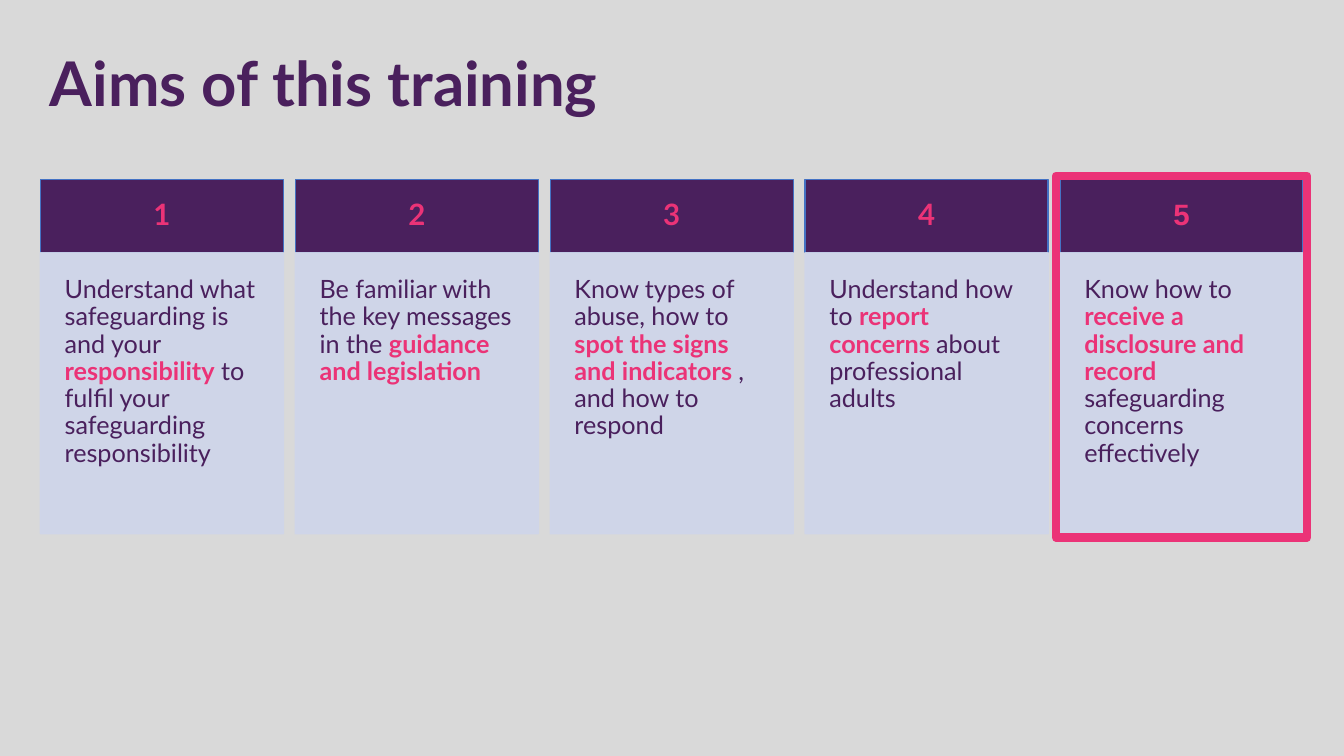
from dataclasses import dataclass

from lxml import etree
from pptx import Presentation
from pptx.dml.color import RGBColor
from pptx.enum.shapes import MSO_SHAPE
from pptx.enum.text import MSO_ANCHOR, MSO_AUTO_SIZE, PP_ALIGN
from pptx.oxml.ns import qn
from pptx.util import Cm, Pt

RECTANGLE = MSO_SHAPE.RECTANGLE
TOP, MIDDLE = MSO_ANCHOR.TOP, MSO_ANCHOR.MIDDLE
LEFT, CENTER = PP_ALIGN.LEFT, PP_ALIGN.CENTER
NO_FIT = MSO_AUTO_SIZE.NONE
TITLE_ONLY = 5


@dataclass(frozen=True)
class Theme:
    background: RGBColor = RGBColor(0xD9, 0xD9, 0xD9)
    purple: RGBColor = RGBColor(0x4A, 0x20, 0x5D)
    pink: RGBColor = RGBColor(0xEB, 0x33, 0x77)
    blue: RGBColor = RGBColor(0x44, 0x72, 0xC4)
    panel: RGBColor = RGBColor(0xCF, 0xD5, 0xEA)
    font: str = "Lato"
    last_number_font: str = "Arial"
    title_size: Pt = Pt(44)
    number_size: Pt = Pt(21)
    body_size: Pt = Pt(18)


THEME = Theme()
TITLE = "Aims of this training"
MARK = "|"
AIMS = [
    "Understand what safeguarding is and your |responsibility| to fulfil your safeguarding responsibility",
    "Be familiar with the key messages in the |guidance and legislation",
    "Know types of abuse, how to |spot the signs and indicators |, and how to respond",
    "Understand how to |report concerns |about professional adults",
    "Know how to |receive a disclosure and record |safeguarding concerns effectively",
]


def set_font(font, name, size, color, bold=False):
    font.name = name
    font.size = size
    font.color.rgb = color
    font.bold = bold


def make_translucent(shape, percent):
    for color in shape._element.spPr.iter(qn("a:srgbClr")):
        etree.SubElement(color, qn("a:alpha")).set("val", str(percent * 1000))


def add_panel(page, left, top, width, height, line_color, line_width, fill_color=None):
    panel = page.shapes.add_shape(RECTANGLE, left, top, width, height)
    panel.shadow.inherit = False
    if fill_color is None:
        panel.fill.background()
    else:
        panel.fill.solid()
        panel.fill.fore_color.rgb = fill_color
    panel.line.color.rgb = line_color
    panel.line.width = line_width
    return panel


def prepare_text(panel, inset, anchor, alignment):
    frame = panel.text_frame
    frame.word_wrap = True
    frame.margin_left = frame.margin_right = inset
    frame.margin_top = frame.margin_bottom = inset
    frame.vertical_anchor = anchor
    para = frame.paragraphs[0]
    para.alignment = alignment
    para.line_spacing = 0.9
    return para


def add_title(page, left, top, width, height):
    title = page.shapes.title
    title.left, title.top, title.width, title.height = left, top, width, height
    frame = title.text_frame
    frame.word_wrap = True
    frame.auto_size = NO_FIT
    frame.vertical_anchor = TOP
    para = frame.paragraphs[0]
    para.text = TITLE
    para.alignment = LEFT
    para.line_spacing = 1.0
    set_font(para.font, THEME.font, THEME.title_size, THEME.purple, True)


def add_aim(page, number, aim, number_font, left, top, width, height):
    header_height = Cm(1.84)
    header = add_panel(page, left, top, width, header_height, THEME.blue, Pt(1), THEME.purple)
    para = prepare_text(header, Cm(0.48), MIDDLE, CENTER)
    para.text = str(number)
    set_font(para.font, number_font, THEME.number_size, THEME.pink, True)

    body = add_panel(page, left, top + header_height, width, height - header_height,
                     THEME.panel, Pt(1), THEME.panel)
    make_translucent(body, 90)
    para = prepare_text(body, Cm(0.61), TOP, LEFT)
    set_font(para.font, THEME.font, THEME.body_size, THEME.purple)
    for index, words in enumerate(aim.split(MARK)):
        span = para.add_run()
        span.text = words
        if index % 2:
            span.font.bold = True
            span.font.color.rgb = THEME.pink


def add_aims(page, left, top, width, height):
    gap = Cm(0.3)
    column_width = (width - gap * (len(AIMS) - 1)) // len(AIMS)
    for index, aim in enumerate(AIMS):
        is_last = index == len(AIMS) - 1
        number_font = THEME.last_number_font if is_last else THEME.font
        column_left = left + index * (column_width + gap)
        add_aim(page, index + 1, aim, number_font, column_left, top, column_width, height)
    margin = Cm(0.1)
    add_panel(page, column_left - margin, top - margin, column_width + 2 * margin,
              height + 2 * margin, THEME.pink, Pt(6))


def main():
    deck = Presentation()
    deck.slide_width, deck.slide_height = Cm(33.87), Cm(19.05)
    page = deck.slides.add_slide(deck.slide_layouts[TITLE_ONLY])
    page.background.fill.solid()
    page.background.fill.fore_color.rgb = THEME.background
    add_title(page, Cm(1), Cm(1), Cm(32.84), Cm(2.06))
    add_aims(page, Cm(1.02), Cm(4.53), Cm(31.82), Cm(8.92))
    deck.save("out.pptx")


if __name__ == "__main__":
    main()
